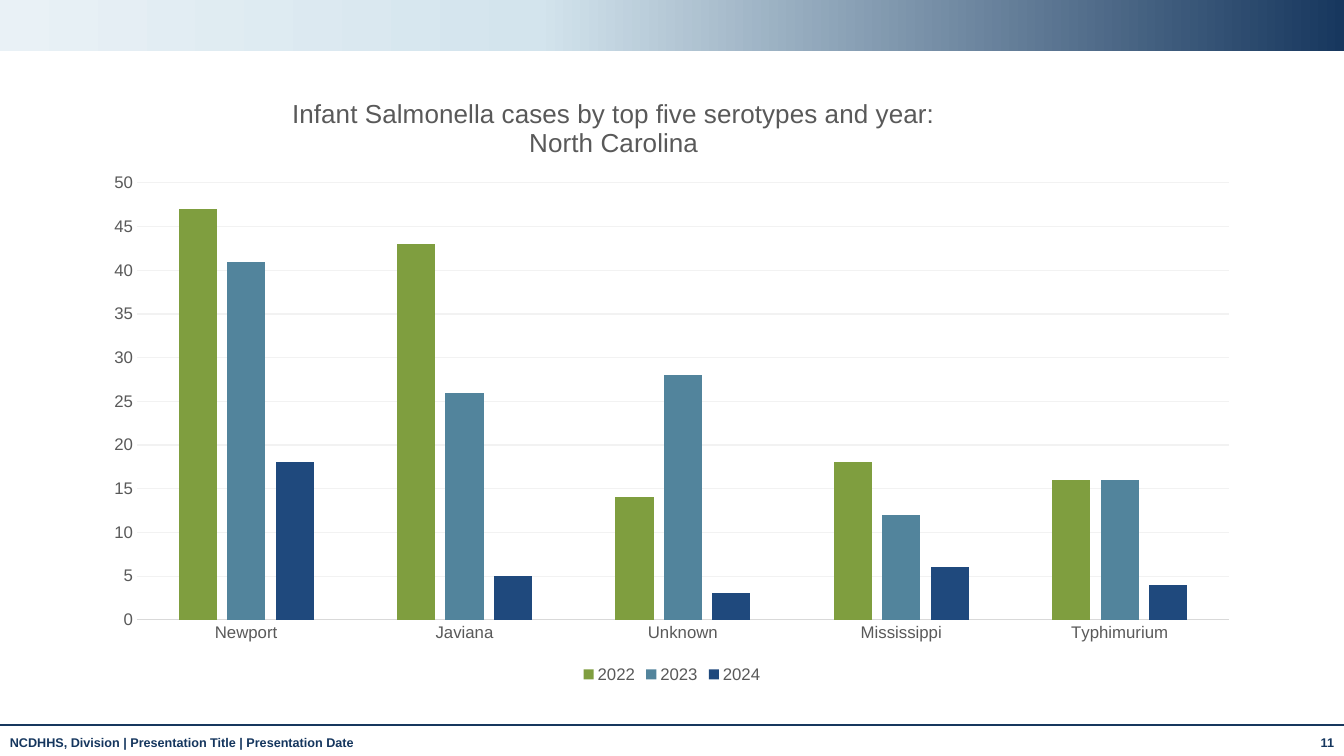
from copy import deepcopy

from lxml import etree
from pptx import Presentation
from pptx.chart.data import CategoryChartData
from pptx.dml.color import RGBColor
from pptx.enum.chart import XL_CHART_TYPE, XL_LEGEND_POSITION, XL_TICK_MARK
from pptx.enum.shapes import MSO_CONNECTOR, MSO_SHAPE
from pptx.enum.text import MSO_ANCHOR, PP_ALIGN
from pptx.oxml.ns import qn
from pptx.util import Inches, Pt

COLUMN_CHART = XL_CHART_TYPE.COLUMN_CLUSTERED
BOTTOM = XL_LEGEND_POSITION.BOTTOM
NO_TICK = XL_TICK_MARK.NONE
STRAIGHT = MSO_CONNECTOR.STRAIGHT
RECT = MSO_SHAPE.RECTANGLE
MIDDLE = MSO_ANCHOR.MIDDLE
LEFT, CENTER, RIGHT = PP_ALIGN.LEFT, PP_ALIGN.CENTER, PP_ALIGN.RIGHT

FONT = "Arial"
COLORS = {
    "background": "FFFFFF", "navy": "17375E", "footer": "15365E",
    "sky": "D3E4ED", "mist": "E9F1F6",
    "text": "595959", "axis": "D9D9D9", "grid": "F2F2F2",
    "2022": "7F9E3F", "2023": "52849C", "2024": "1F497D",
}

# Grid of 160 columns by 100 rows
WIDTH, HEIGHT = Inches(13.33), Inches(7.5)
COLUMNS, ROWS = 160, 100

SEROTYPES = ["Newport", "Javiana", "Unknown", "Mississippi", "Typhimurium"]
CASES = {
    "2022": [47, 43, 14, 18, 16],
    "2023": [41, 26, 28, 12, 16],
    "2024": [18, 5, 3, 6, 4],
}
TITLE = ["Infant Salmonella cases by top five serotypes and year:",
         "North Carolina"]


def color(name):
    return RGBColor.from_string(COLORS[name])


def grid(left, top, width, height):
    """Turn columns and rows into slide lengths."""
    return (int(WIDTH * left / COLUMNS), int(HEIGHT * top / ROWS),
            int(WIDTH * width / COLUMNS), int(HEIGHT * height / ROWS))


def set_font(font, size, name="text", bold=False):
    font.name = FONT
    font.size = Pt(size)
    font.bold = bold
    font.color.rgb = color(name)


def write(tf, lines, size=9, name="text", bold=False, align=LEFT):
    for i, line in enumerate(lines):
        p = tf.add_paragraph() if i else tf.paragraphs[0]
        p.alignment = align
        r = p.add_run()
        r.text = line
        set_font(r.font, size, name, bold)


def add_footer(s, text, box, align=LEFT):
    tf = s.shapes.add_textbox(*grid(*box)).text_frame
    tf.word_wrap = True
    tf.vertical_anchor = MIDDLE
    write(tf, [text], name="footer", bold=True, align=align)


def add_band(s, box, stops):
    sp = s.shapes.add_shape(RECT, *grid(*box))
    sp.shadow.inherit = False
    sp.line.fill.background()
    sp.fill.gradient()
    sp.fill.gradient_angle = 180
    gs_list = sp.element.spPr.find(".//" + qn("a:gsLst"))
    while len(gs_list) < len(stops):
        gs_list.append(deepcopy(gs_list[0]))
    for stop, (position, name) in zip(sp.fill.gradient_stops, stops):
        stop.position = position
        stop.color.rgb = color(name)


def add_rule(s, row):
    left, top, width, _ = grid(0, row, COLUMNS, 0)
    line = s.shapes.add_connector(STRAIGHT, left, top, left + width, top)
    line.line.color.rgb = color("navy")
    line.line.width = Pt(1.75)
    etree.SubElement(line.element.spPr, qn("a:effectLst"))


def place(parent, index, **shares):
    """Place a chart part by shares of the chart's size."""
    old = parent.find(qn("c:layout"))
    if old is not None:
        parent.remove(old)
    layout = etree.Element(qn("c:layout"))
    manual = etree.SubElement(layout, qn("c:manualLayout"))
    settings = {"xMode": "edge", "yMode": "edge", **shares}
    if "w" in shares:
        settings = {"layoutTarget": "inner", **settings}
    for tag, value in settings.items():
        etree.SubElement(manual, qn("c:" + tag)).set("val", str(value))
    parent.insert(index, layout)


def style_axis(axis):
    axis.major_tick_mark = axis.minor_tick_mark = NO_TICK
    set_font(axis.tick_labels.font, 12)


def add_cases_chart(s, box):
    data = CategoryChartData()
    data.categories = SEROTYPES
    for year, values in CASES.items():
        data.add_series(year, values)
    chart = s.shapes.add_chart(COLUMN_CHART, *grid(*box), data).chart
    set_font(chart.font, 12)

    # Title
    chart.has_title = True
    write(chart.chart_title.text_frame, TITLE, size=18.6, align=CENTER)
    title = chart.chart_title.element if hasattr(chart.chart_title, "element") \
        else chart.element.find(".//" + qn("c:title"))
    place(title, 1, x=0.17, y=0.03)

    # Columns
    plot = chart.plots[0]
    plot.gap_width, plot.overlap = 219, -27
    plot.vary_by_categories = False
    for series in plot.series:
        series.format.fill.solid()
        series.format.fill.fore_color.rgb = color(series.name)
    plot_area = chart.element.find(".//" + qn("c:plotArea"))
    place(plot_area, 0, x=0.039, y=0.1755, w=0.941, h=0.714)

    # Axes
    cat, val = chart.category_axis, chart.value_axis
    style_axis(cat)
    style_axis(val)
    val.minimum_scale, val.maximum_scale, val.major_unit = 0, 50, 5
    val.has_major_gridlines = True
    val.format.line.fill.background()
    for line, name in ((cat.format.line, "axis"),
                       (val.major_gridlines.format.line, "grid")):
        line.color.rgb = color(name)
        line.width = Pt(0.75)

    # Legend
    chart.has_legend = True
    chart.legend.position = BOTTOM
    chart.legend.include_in_layout = False
    set_font(chart.legend.font, 12)


def main():
    prs = Presentation()
    prs.slide_width, prs.slide_height = WIDTH, HEIGHT
    s = prs.slides.add_slide(prs.slide_layouts[6])
    s.background.fill.solid()
    s.background.fill.fore_color.rgb = color("background")

    # Footer
    add_footer(s, "NCDHHS, Division | Presentation Title | Presentation Date",
               (0, 96.27, 140, 3.87))
    add_footer(s, "11", (152.9, 96.27, 7.1, 3.87), align=RIGHT)

    # Top band and footer rule
    add_band(s, (0, 0, COLUMNS, 6.7),
             [(0, "navy"), (0.6, "sky"), (1, "mist")])
    add_rule(s, 95.87)

    add_cases_chart(s, (10.92, 10, 138.15, 80.93))
    prs.save("out.pptx")


if __name__ == "__main__":
    main()
